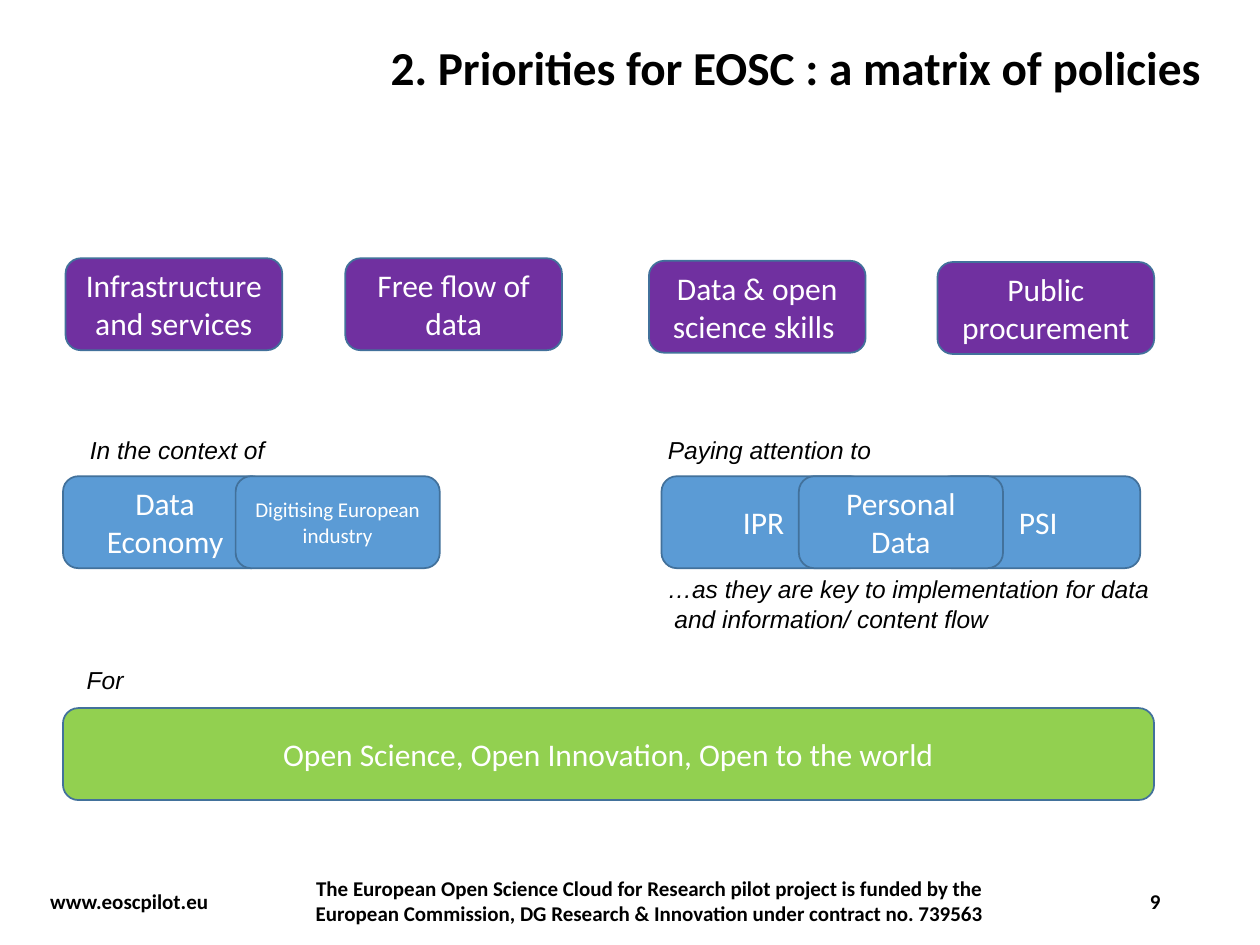
from pptx import Presentation
from pptx.dml.color import RGBColor
from pptx.enum import shapes, text
from pptx.util import Inches, Pt

PURPLE = RGBColor(0x70, 0x30, 0xA0)
BLUE = RGBColor(0x5B, 0x9B, 0xD5)
GREEN = RGBColor(0x92, 0xD0, 0x50)
OUTLINE = RGBColor(0x42, 0x71, 0x9B)
WHITE = RGBColor(0xFF, 0xFF, 0xFF)
BLACK = RGBColor(0, 0, 0)
LEFT, CENTER, RIGHT = text.PP_ALIGN.LEFT, text.PP_ALIGN.CENTER, text.PP_ALIGN.RIGHT
TOP, MIDDLE = text.MSO_ANCHOR.TOP, text.MSO_ANCHOR.MIDDLE
CARD_HEIGHT = 0.73


def write(frame, lines, size, color, align=LEFT, anchor=MIDDLE,
          font="Calibri", bold=False, italic=False):
    """Fill a text frame with one formatted run per line."""
    frame.word_wrap = True
    frame.auto_size = text.MSO_AUTO_SIZE.NONE
    frame.vertical_anchor = anchor
    for index, line in enumerate(lines):
        paragraph = frame.paragraphs[0] if index == 0 else frame.add_paragraph()
        paragraph.alignment = align
        run = paragraph.add_run()
        run.text = line
        run.font.name, run.font.size = font, Pt(size)
        run.font.bold, run.font.italic = bold, italic
        run.font.color.rgb = color


def add_card(slide, left, top, width, label, fill, size=18):
    """Draw one rounded policy card."""
    card = slide.shapes.add_shape(
        shapes.MSO_SHAPE.ROUNDED_RECTANGLE,
        Inches(left), Inches(top), Inches(width), Inches(CARD_HEIGHT))
    card.shadow.inherit = False
    card.fill.solid()
    card.fill.fore_color.rgb = fill
    card.line.color.rgb = OUTLINE
    card.line.width = Pt(1)
    write(card.text_frame, [label], size, WHITE, CENTER)


def add_caption(slide, left, top, width, lines, align=LEFT):
    """Place an italic caption beside a group of cards."""
    caption = slide.shapes.add_textbox(
        Inches(left), Inches(top), Inches(width), Inches(0.65))
    write(caption.text_frame, lines, 14, BLACK, align, TOP, "Arial", italic=True)


def add_title(slide, left, top, width, height):
    """Fill the title placeholder."""
    title = slide.shapes.title
    title.left, title.top = Inches(left), Inches(top)
    title.width, title.height = Inches(width), Inches(height)
    write(title.text_frame, ["2. Priorities for EOSC : a matrix of policies"],
          27, BLACK, bold=True)
    title.text_frame.paragraphs[0].line_spacing = 0.9


def add_priorities(slide, left, top):
    """Draw the row of purple priorities."""
    for dx, dy, label in (
            (0, 0, "Infrastructure and services"),
            (2.22, 0, "Free flow of data"),
            (4.63, 0.02, "Data & open science skills "),
            (6.92, 0.03, "Public procurement")):
        add_card(slide, left + dx, top + dy, 1.72, label, PURPLE)


def add_context(slide, left, top):
    """Draw the overlapping context cards under their caption."""
    add_caption(slide, left, top, 1.87, ["In the context of "], CENTER)
    add_card(slide, left, top + 0.38, 1.62, "Data Economy", BLUE)
    add_card(slide, left + 1.37, top + 0.38, 1.62,
             "Digitising European industry", BLUE, 12)


def add_attention(slide, left, top):
    """Draw the points of attention, the middle card in front."""
    step = 1.09
    for column, label in ((0, "IPR"), (2, "PSI"), (1, "Personal Data")):
        add_card(slide, left + 0.05 + column * step, top + 0.38, 1.62, label, BLUE)
    add_caption(slide, left, top, 1.87, ["Paying attention to "], CENTER)
    add_caption(slide, left, top + 1.11, 4.27,
                ["…as they are key to implementation for data",
                 " and information/ content flow"])


def add_goal(slide, left, top, width):
    """Draw the wide goal card under its caption."""
    add_card(slide, left, top + 0.39, width,
             "Open Science, Open Innovation, Open to the world", GREEN)
    add_caption(slide, left + 0.09, top, 1.87, ["For"])


def add_footer(slide, left, top, height):
    """Write the web address, funding note and page number."""
    funding = ("The European Open Science Cloud for Research pilot project is funded "
               "by the European Commission, DG Research & Innovation under "
               "contract no. 739563")
    for dx, width, words, align in (
            (0, 1.48, "www.eoscpilot.eu", LEFT),
            (2.07, 5.57, funding, CENTER),
            (8.41, 0.6, "9", RIGHT)):
        part = slide.shapes.add_textbox(
            Inches(left + dx), Inches(top), Inches(width), Inches(height))
        write(part.text_frame, [words], 12, BLACK, align, bold=True)


def main():
    """Build and save the slide."""
    deck = Presentation()
    deck.slide_width, deck.slide_height = Inches(10), Inches(7.5)
    slide = deck.slides.add_slide(deck.slide_layouts[5])
    add_title(slide, 3, 0.15, 6.83, 0.82)
    add_footer(slide, 0.3, 6.95, 0.4)
    add_priorities(slide, 0.52, 2.05)
    add_context(slide, 0.5, 3.4)
    add_attention(slide, 5.2, 3.4)
    add_goal(slide, 0.5, 5.23, 8.66)
    deck.save("out.pptx")


if __name__ == "__main__":
    main()
